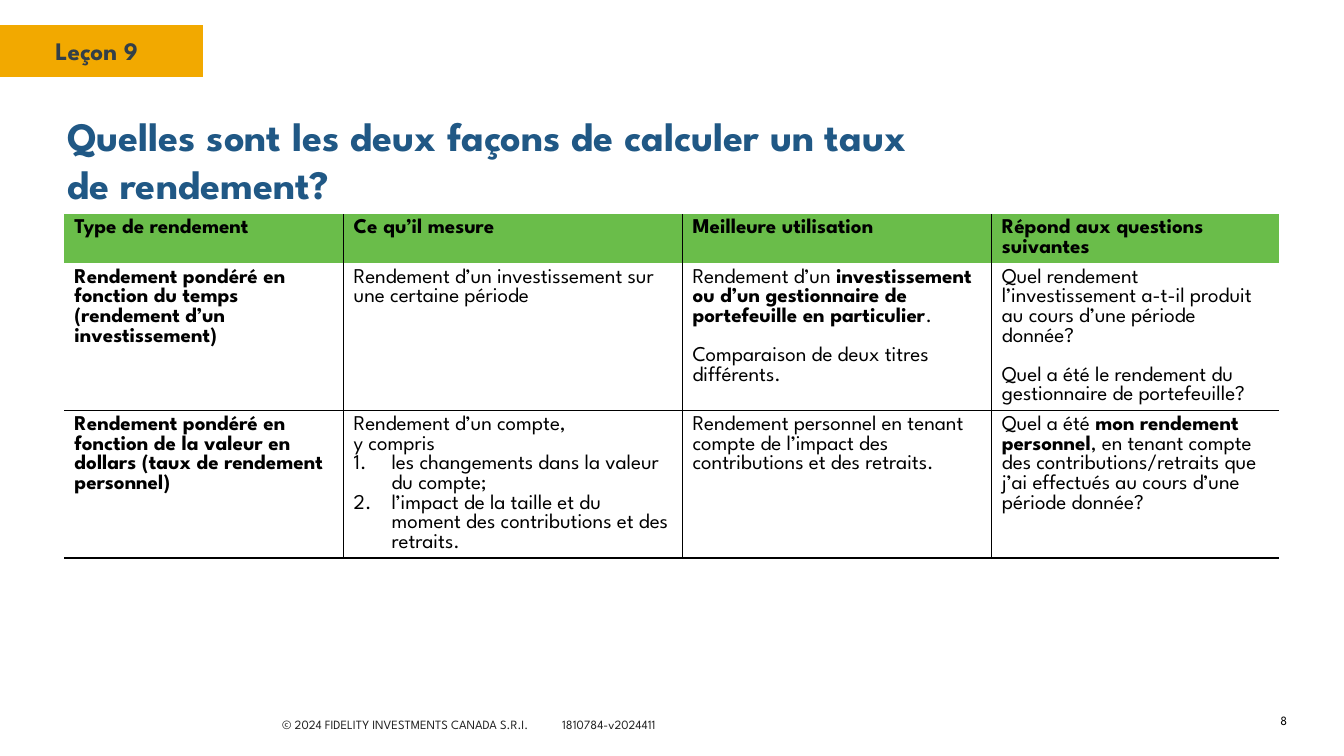
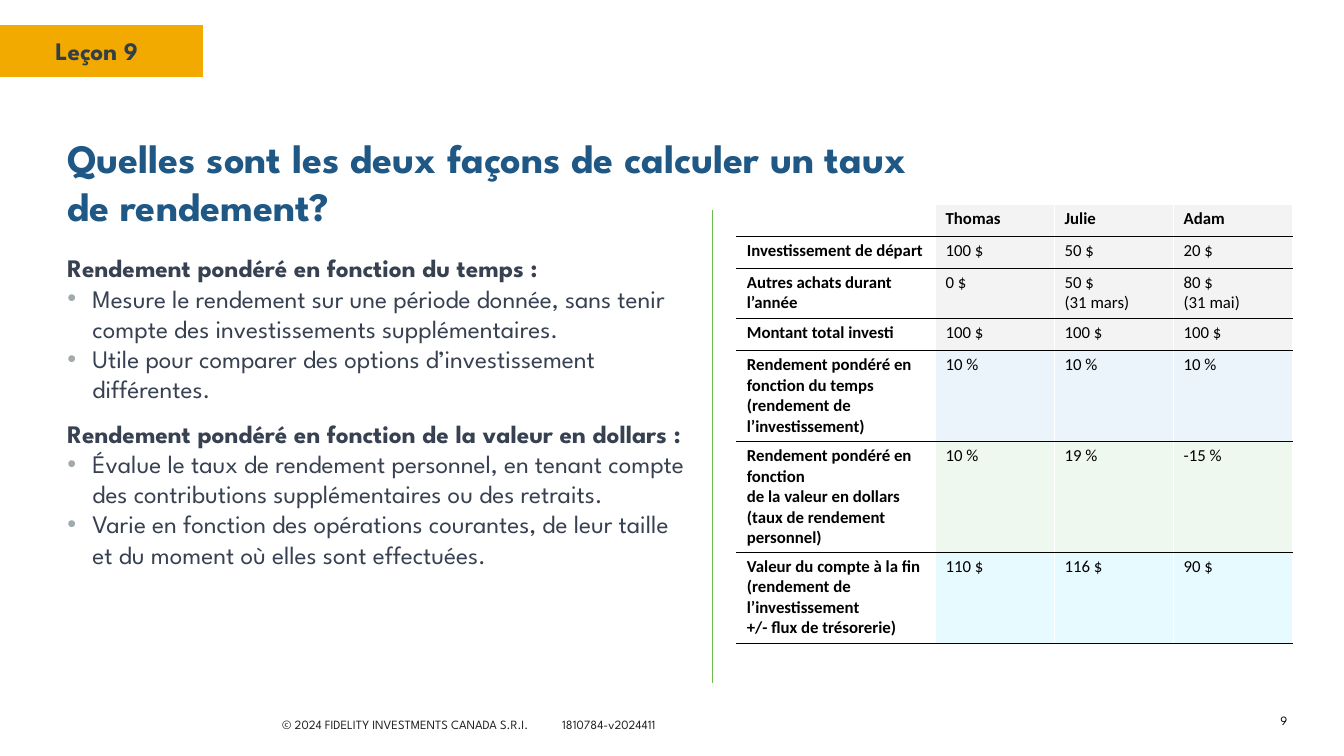
from dataclasses import dataclass
from typing import NamedTuple, Optional, Sequence

from lxml import etree
from pptx import Presentation
from pptx.dml.color import RGBColor
from pptx.enum import shapes, text
from pptx.oxml import ns
from pptx.util import Pt

AMBER = RGBColor(0xF2, 0xA9, 0x00)
GREEN = RGBColor(0x6A, 0xBD, 0x4A)
NAVY = RGBColor(0x20, 0x58, 0x85)
SLATE = RGBColor(0x33, 0x3F, 0x48)
BODY = RGBColor(0x37, 0x41, 0x51)
FOOTER = RGBColor(0x22, 0x22, 0x22)
BULLET = RGBColor(0xA2, 0xAA, 0xAD)
BLACK = RGBColor(0x00, 0x00, 0x00)
WHITE = RGBColor(0xFF, 0xFF, 0xFF)
PALE_GREY = RGBColor(0xF3, 0xF3, 0xF3)
PALE_BLUE = RGBColor(0xEB, 0xF4, 0xFA)
PALE_GREEN = RGBColor(0xEF, 0xF8, 0xEE)
PALE_CYAN = RGBColor(0xE7, 0xFA, 0xFF)

SPARTAN = "League Spartan"
CALIBRI = "Calibri"
TITLE = "Quelles sont les deux façons de calculer un taux\vde rendement?"


class Run(NamedTuple):
    text: str
    bold: bool = False


@dataclass(frozen=True)
class Para:
    runs: Sequence[Run]
    marker: str = ""
    before: float = 0


class Box(NamedTuple):
    left: float
    top: float
    width: float
    height: float

    def lengths(self) -> list:
        return [Pt(v) for v in self]


class Borders(NamedTuple):
    """Colours of the left, right, top and bottom edges of a cell."""
    left: Optional[RGBColor]
    right: Optional[RGBColor]
    top: Optional[RGBColor]
    bottom: Optional[RGBColor]


@dataclass(frozen=True)
class Cell:
    paras: Sequence[Para]
    fill: RGBColor
    borders: Borders


def plain(words: str, **layout) -> Para:
    return Para([Run(words)], **layout)


def bold(words: str, **layout) -> Para:
    return Para([Run(words, True)], **layout)


def child(parent, tag: str, **attrs: str):
    return etree.SubElement(parent, ns.qn(tag), attrs)


def add_marker(p, marker: str, indent: float) -> None:
    """Give a paragraph a hanging bullet, or a number when marker is '1.'."""
    pPr = p._p.get_or_add_pPr()
    pPr.set("marL", str(Pt(indent)))
    pPr.set("indent", str(-Pt(indent)))
    if marker == "1.":
        child(pPr, "a:buAutoNum", type="arabicPeriod")
    else:
        child(child(pPr, "a:buClr"), "a:srgbClr", val=str(BULLET))
        child(pPr, "a:buFont", typeface="Arial")
        child(pPr, "a:buChar", char=marker)


def write(tf, paras: Sequence[Para], *, size: float, color: RGBColor,
          font: str = SPARTAN, leading: float = 0,
          align=text.PP_ALIGN.LEFT, indent: float = 18, tab: float = 0) -> None:
    """Fill a text frame; a leading in points fixes the line height."""
    tf.word_wrap = True
    for i, para in enumerate(paras):
        p = tf.add_paragraph() if i else tf.paragraphs[0]
        if para.marker:
            add_marker(p, para.marker, indent)
        if tab:
            stops = child(p._p.get_or_add_pPr(), "a:tabLst")
            child(stops, "a:tab", pos=str(Pt(tab)), algn="l")
        p.alignment = align
        p.space_before = Pt(para.before)
        if leading:
            p.line_spacing = Pt(leading)
        points = str(round(size * 100))
        for run in para.runs:
            for n, line in enumerate(run.text.split("\v")):
                if n:
                    p.add_line_break()
                    child(p._p[-1], "a:rPr", sz=points)
                r = p.add_run()
                r.text = line
                r.font.name, r.font.size = font, Pt(size)
                r.font.bold, r.font.color.rgb = run.bold, color
        child(p._p, "a:endParaRPr", sz=points)


def add_text(slide, box: Box, paras: Sequence[Para], **style) -> None:
    write(slide.shapes.add_textbox(*box.lengths()).text_frame, paras, **style)


def add_frame(slide, number: int, title_top: float) -> None:
    """Draw the lesson band, title, copyright line and page number."""
    sp = slide.shapes.add_shape(shapes.MSO_SHAPE.RECTANGLE,
                                *Box(0, 18, 145, 37).lengths())
    sp.shadow.inherit = False
    sp.fill.solid()
    sp.fill.fore_color.rgb = AMBER
    sp.line.fill.background()
    add_text(slide, Box(32.4, 22, 95, 29), [bold("Leçon 9")],
             size=18, color=SLATE)
    add_text(slide, Box(194.4, 508.3, 312, 18),
             [plain("© 2024 FIDELITY INVESTMENTS CANADA S.R.I.\t1810784-v2024411")],
             size=9, color=FOOTER, tab=200)
    add_text(slide, Box(41, title_top, 880, 78), [bold(TITLE)],
             size=28.8, color=NAVY)
    add_text(slide, Box(876, 505.5, 50.5, 18), [plain(str(number))],
             size=9, color=BLACK, align=text.PP_ALIGN.RIGHT)


def set_borders(cell, borders: Borders) -> None:
    tcPr = cell._tc.get_or_add_tcPr()
    for i, (side, color) in enumerate(zip("LRTB", borders)):
        ln = etree.Element(ns.qn(f"a:ln{side}"), w=str(Pt(1)))
        if color is None:
            child(ln, "a:noFill")
        else:
            child(child(ln, "a:solidFill"), "a:srgbClr", val=str(color))
        tcPr.insert(i, ln)


def add_table(slide, left: float, top: float, widths: Sequence[float],
              heights: Sequence[float], rows: Sequence[Sequence[Cell]], *,
              margin: float = 3.6, **style) -> None:
    box = Box(left, top, sum(widths), sum(heights))
    table = slide.shapes.add_table(len(heights), len(widths),
                                   *box.lengths()).table
    for column, width in zip(table.columns, widths):
        column.width = Pt(width)
    for row, height in zip(table.rows, heights):
        row.height = Pt(height)
    for r, row in enumerate(rows):
        for c, content in enumerate(row):
            cell = table.cell(r, c)
            cell.margin_top = cell.margin_bottom = Pt(margin)
            cell.fill.solid()
            cell.fill.fore_color.rgb = content.fill
            set_borders(cell, content.borders)
            write(cell.text_frame, content.paras, color=BLACK, **style)


def add_methods_slide(prs) -> None:
    slide = prs.slides.add_slide(prs.slide_layouts[6])
    add_frame(slide, 8, 75.6)
    header = ["Type de rendement", "Ce qu’il mesure", "Meilleure utilisation",
              "Répond aux questions suivantes"]
    time_weighted = [
        [bold("Rendement pondéré en fonction du temps\v"
              "(rendement d’un investissement)")],
        [plain("Rendement d’un investissement sur une certaine période")],
        [Para([Run("Rendement d’un "),
               Run("investissement ou d’un gestionnaire de portefeuille "
                   "en particulier", True), Run(".")]),
         plain("Comparaison de deux titres différents.", before=14)],
        [plain("Quel rendement l’investissement a-t-il produit au cours "
               "d’une période donnée?"),
         plain("Quel a été le rendement du gestionnaire de portefeuille?",
               before=14)],
    ]
    dollar_weighted = [
        [bold("Rendement pondéré en fonction de la valeur en dollars "
              "(taux de rendement personnel)")],
        [plain("Rendement d’un compte,\vy compris"),
         plain("les changements dans la valeur du compte;", marker="1."),
         plain("l’impact de la taille et du moment des contributions "
               "et des retraits.", marker="1.")],
        [plain("Rendement personnel en tenant compte de l’impact des "
               "contributions et des retraits.")],
        [Para([Run("Quel a été "), Run("mon rendement personnel", True),
               Run(", en tenant compte des contributions/retraits que j’ai "
                   "effectués au cours d’une période donnée?")])],
    ]
    content = [[[bold(name)] for name in header], time_weighted, dollar_weighted]
    last = len(header) - 1
    rows = [[Cell(paras, WHITE if r else GREEN,
                  Borders(BLACK if c else None, BLACK if c < last else None,
                          BLACK if r == 2 else None, BLACK if r else None))
             for c, paras in enumerate(row)] for r, row in enumerate(content)]
    add_table(slide, 46, 152.9, [199.5, 242, 221, 205], [35, 105, 105], rows,
              size=15, indent=27, leading=14)


def add_example_slide(prs) -> None:
    slide = prs.slides.add_slide(prs.slide_layouts[6])
    add_frame(slide, 9, 91.4)
    add_text(slide, Box(41, 177, 462, 301), [
        bold("Rendement pondéré en fonction du temps\u00a0:"),
        plain("Mesure le rendement sur une période donnée, sans tenir compte "
              "des investissements supplémentaires.", marker="•"),
        plain("Utile pour comparer des options d’investissement différentes.",
              marker="•"),
        bold("Rendement pondéré en fonction de la valeur en dollars\u00a0:",
             before=10),
        plain("Évalue le taux de rendement personnel, en tenant compte des "
              "contributions supplémentaires ou des retraits.", marker="•"),
        plain("Varie en fonction des opérations courantes, de leur taille et "
              "du moment où elles sont effectuées.", marker="•"),
    ], size=18, color=BODY)

    divider = slide.shapes.add_connector(shapes.MSO_CONNECTOR.STRAIGHT,
                                         Pt(509), Pt(150), Pt(509), Pt(488))
    divider.line.color.rgb = GREEN
    divider.line.width = Pt(1)
    child(divider._element.spPr, "a:effectLst")

    content = [
        (PALE_GREY, [], ["Thomas", "Julie", "Adam"]),
        (PALE_GREY, ["Investissement de départ"], ["100 $", "50 $", "20 $"]),
        (PALE_GREY, ["Autres achats durant l’année"],
         ["0 $", "50 $\v(31 mars)", "80 $\v(31 mai)"]),
        (PALE_GREY, ["Montant total investi"], ["100 $"] * 3),
        (PALE_BLUE, ["Rendement pondéré en fonction du temps "
                     "(rendement de l’investissement)"], ["10 %"] * 3),
        (PALE_GREEN, ["Rendement pondéré en fonction",
                      "de la valeur en dollars (taux de rendement personnel)"],
         ["10 %", "19 %", "-15 %"]),
        (PALE_CYAN, ["Valeur du compte à la fin",
                     "(rendement de l’investissement",
                     "+/- flux de trésorerie)"], ["110 $", "116 $", "90 $"]),
    ]
    rows = []
    for r, (tint, label, values) in enumerate(content):
        borders = Borders(WHITE, WHITE, BLACK if r else WHITE, BLACK)
        label_paras = [bold(line) for line in label] or [Para([])]
        value_style = plain if r else bold
        rows.append([Cell(label_paras, WHITE, borders)]
                    + [Cell([value_style(v)], tint, borders) for v in values])
    add_table(slide, 526.3, 146, [142, 85, 85, 85],
              [22.8, 22.8, 36, 22.8, 65, 79, 65], rows,
              margin=3, size=12, font=CALIBRI)


def main() -> None:
    prs = Presentation()
    prs.slide_width, prs.slide_height = Pt(960), Pt(540)
    add_methods_slide(prs)
    add_example_slide(prs)
    prs.save("out.pptx")


if __name__ == "__main__":
    main()
